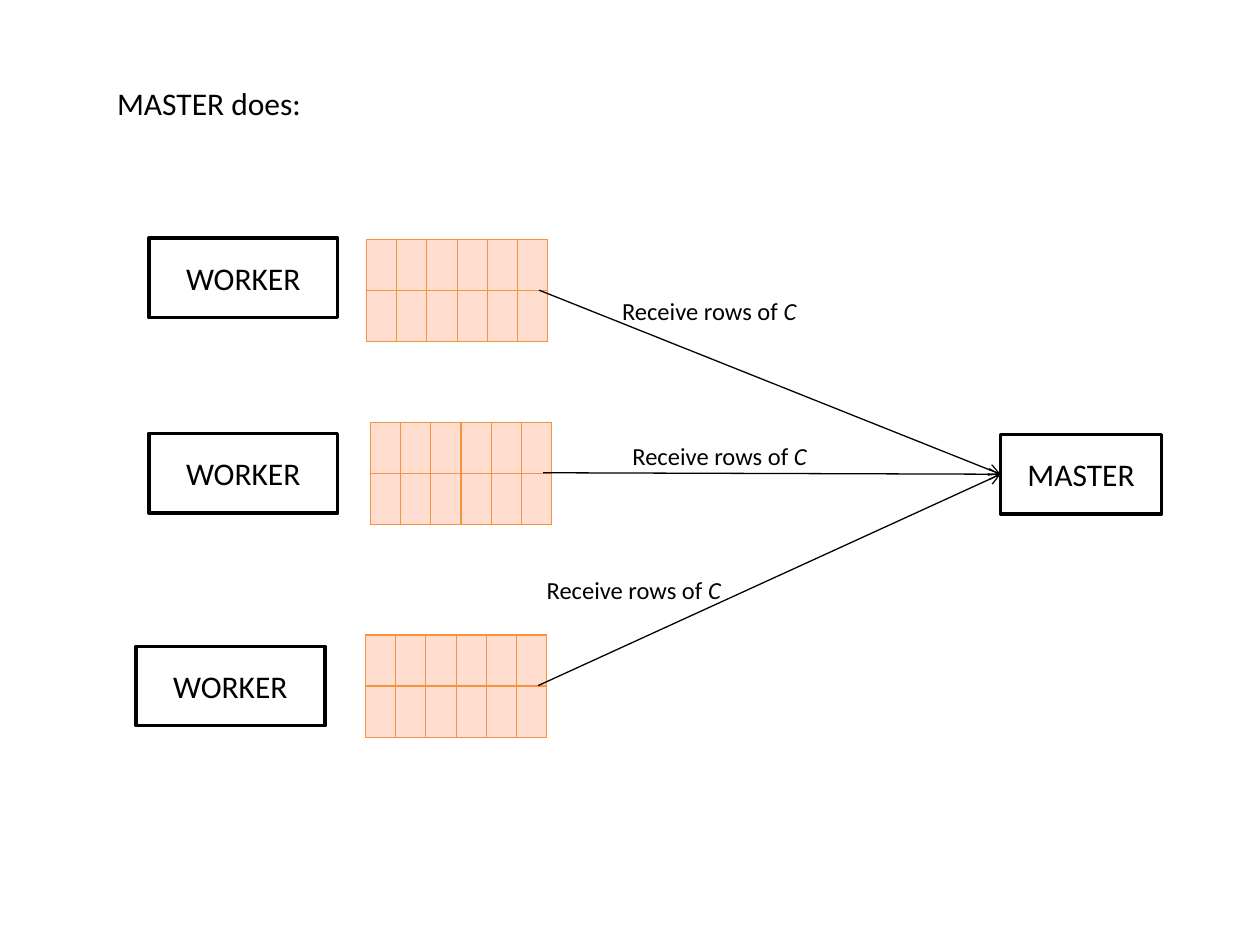
from lxml import etree
from pptx import Presentation, util as u
from pptx.dml.color import RGBColor
from pptx.enum import shapes, text
from pptx.oxml import ns

BLACK = RGBColor(0x00, 0x00, 0x00)
WHITE = RGBColor(0xFF, 0xFF, 0xFF)
ORANGE = RGBColor(0xF6, 0x92, 0x40)
PEACH = RGBColor(0xFF, 0xDD, 0xCF)

ROWS, COLUMNS = 2, 6
COLUMN_WIDTH, ROW_HEIGHT = 0.58, 1.02
BOX_HEIGHT = 1.6
WORKERS = [(3, 4.8), (3, 8.74), (2.74, 13.03)]
MATRICES = [(7.39, 4.83), (7.47, 8.51), (7.37, 12.8)]
LABELS = [(12.29, 5.84), (12.5, 8.76), (10.77, 11.46)]


class Diagram:
    """Draws styled elements on the current slide, with lengths in centimetres."""

    font = "Calibri"
    line_width = u.Pt(0.75)

    def __init__(self, slide):
        self.slide = slide

    def place(self, left, top, width, height):
        return [u.Cm(length) for length in (left, top, width, height)]

    def format_runs(self, paragraph, size):
        for run in paragraph.runs:
            run.font.name = self.font
            run.font.size = u.Pt(size)
            run.font.color.rgb = BLACK

    def title(self, words, *bounds):
        shape = self.slide.shapes.title
        shape.left, shape.top, shape.width, shape.height = self.place(*bounds)
        frame = shape.text_frame
        frame.text = words
        frame.margin_left = u.Cm(0.4)
        frame.vertical_anchor = text.MSO_ANCHOR.TOP
        frame.auto_size = text.MSO_AUTO_SIZE.NONE
        frame.paragraphs[0].alignment = text.PP_ALIGN.LEFT
        self.format_runs(frame.paragraphs[0], 18)

    def box(self, words, *bounds):
        shape = self.slide.shapes.add_shape(shapes.MSO_SHAPE.RECTANGLE, *self.place(*bounds))
        shape.shadow.inherit = False
        shape.fill.solid()
        shape.fill.fore_color.rgb = WHITE
        shape.line.color.rgb = BLACK
        shape.line.width = u.Pt(2)
        frame = shape.text_frame
        frame.text = words
        frame.vertical_anchor = text.MSO_ANCHOR.MIDDLE
        frame.paragraphs[0].alignment = text.PP_ALIGN.CENTER
        self.format_runs(frame.paragraphs[0], 18)
        return shape

    def cell_borders(self, cell):
        properties = cell._tc.get_or_add_tcPr()
        for index, side in enumerate(("lnL", "lnR", "lnT", "lnB")):
            line = etree.Element(ns.qn(f"a:{side}"), w=str(self.line_width))
            fill = etree.SubElement(line, ns.qn("a:solidFill"))
            etree.SubElement(fill, ns.qn("a:srgbClr"), val=str(ORANGE))
            properties.insert(index, line)

    def matrix(self, left, top):
        bounds = self.place(left, top, COLUMNS * COLUMN_WIDTH, ROWS * ROW_HEIGHT)
        table = self.slide.shapes.add_table(ROWS, COLUMNS, *bounds).table
        for cell in table.iter_cells():
            cell.fill.solid()
            cell.fill.fore_color.rgb = PEACH
            self.cell_borders(cell)

    def arrow(self, left, top, target):
        start = u.Cm(left), u.Cm(top)
        connector = self.slide.shapes.add_connector(shapes.MSO_CONNECTOR.STRAIGHT, *start, *start)
        connector.end_connect(target, 1)
        connector.line.color.rgb = BLACK
        connector.line.width = self.line_width
        line = connector.line._get_or_add_ln()
        etree.SubElement(line, ns.qn("a:tailEnd"), type="arrow")
        etree.SubElement(connector._element.spPr, ns.qn("a:effectLst"))

    def label(self, words, symbol, left, top):
        shape = self.slide.shapes.add_textbox(*self.place(left, top, 4.06, 0.86))
        frame = shape.text_frame
        frame.word_wrap = False
        frame.auto_size = text.MSO_AUTO_SIZE.SHAPE_TO_FIT_TEXT
        paragraph = frame.paragraphs[0]
        paragraph.text = words
        symbol_run = paragraph.add_run()
        symbol_run.text = symbol
        symbol_run.font.italic = True
        self.format_runs(paragraph, 14)


def main():
    presentation = Presentation()
    presentation.slide_width, presentation.slide_height = u.Cm(25.4), u.Cm(19.05)
    diagram = Diagram(presentation.slides.add_slide(presentation.slide_layouts[5]))

    diagram.title("MASTER does:", 1.96, 1.57, 4.85, 1.02)
    for left, top in WORKERS:
        diagram.box("WORKER", left, top, 3.81, BOX_HEIGHT)
    for left, top in MATRICES:
        diagram.matrix(left, top)
    master = diagram.box("MASTER", 20.17, 8.76, 3.25, BOX_HEIGHT)
    for left, top in MATRICES:
        diagram.arrow(left + COLUMNS * COLUMN_WIDTH, top + ROWS * ROW_HEIGHT / 2, master)
    for left, top in LABELS:
        diagram.label("Receive rows of ", "C", left, top)

    presentation.save("out.pptx")


if __name__ == "__main__":
    main()
